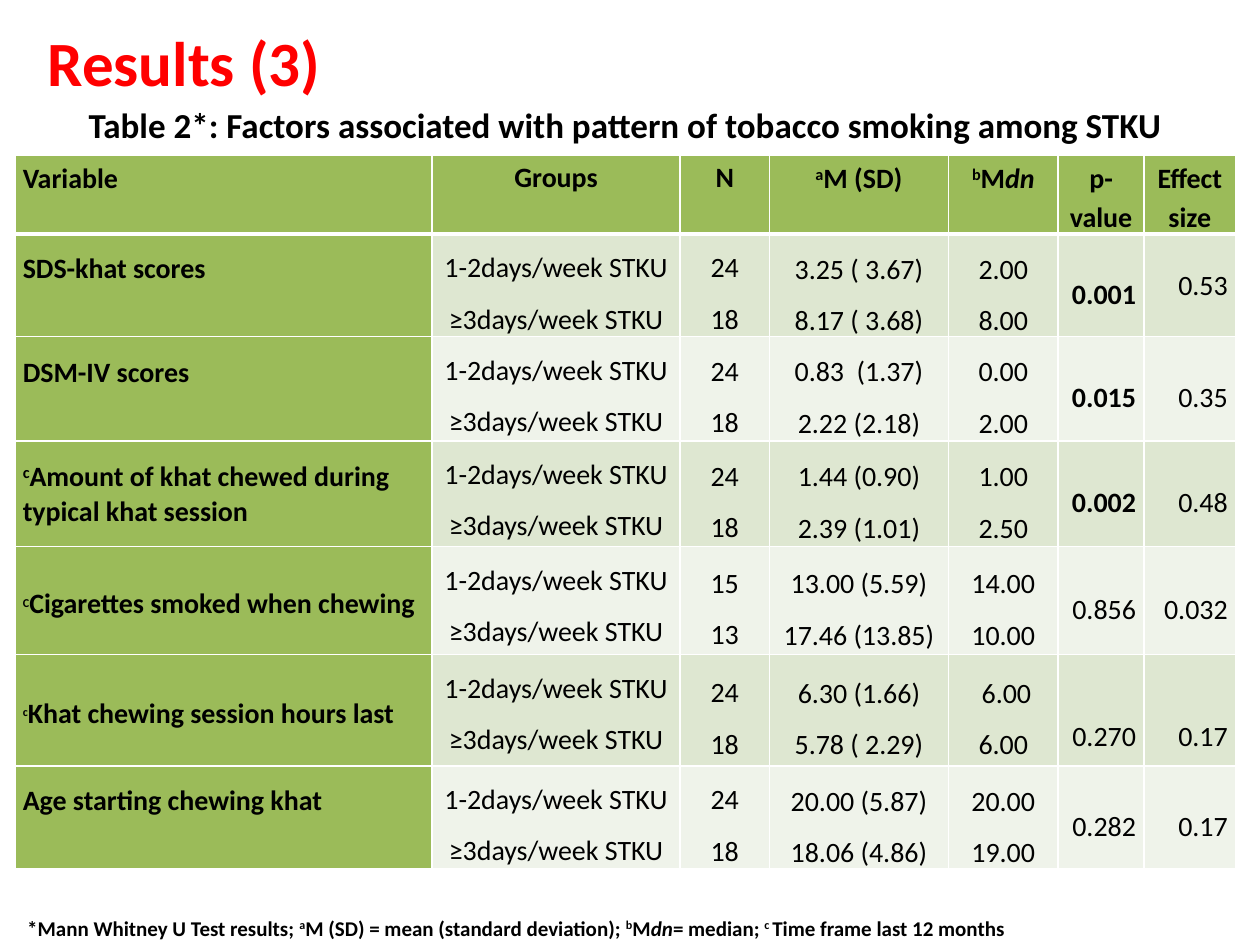
from dataclasses import dataclass
from lxml.etree import SubElement
from pptx import Presentation
from pptx.dml.color import RGBColor
from pptx.enum.text import MSO_ANCHOR, PP_ALIGN
from pptx.oxml.ns import qn
from pptx.util import Cm, Pt

LEFT, MID, RIGHT = PP_ALIGN.LEFT, PP_ALIGN.CENTER, PP_ALIGN.RIGHT


@dataclass(frozen=True)
class Theme:
    font: str = "Calibri"
    red: str = "FF0000"
    black: str = "000000"
    white: str = "FFFFFF"
    green: str = "9BBB59"
    bands: tuple = ("DEE7D1", "EFF3EA")
    title: int = 36
    head: int = 20
    cell: int = 16
    note: int = 12


class Deck:
    def __init__(self, theme):
        self.theme = theme
        self.file = Presentation()
        self.file.slide_width, self.file.slide_height = Cm(25.4), Cm(19.05)
        self.slide = self.file.slides.add_slide(self.file.slide_layouts[6])

    def line(self, para, runs, size, color=None, bold=True, align=LEFT, space=1.0):
        """Fill a paragraph; a run is (text, kind) or (text, kind, size)."""
        para.alignment, para.line_spacing = align, space
        for text, kind, *own in runs:
            run = para.add_run()
            run.text = text
            font = run.font
            font.name, font.bold = self.theme.font, bold
            font.size = Pt(own[0] if own else size)
            font.color.rgb = RGBColor.from_string(color or self.theme.black)
            if kind == "it":
                font.italic = True
            if kind == "sup":
                run._r.get_or_add_rPr().set("baseline", "30000")

    def text(self, box, runs, size, **look):
        frame = self.slide.shapes.add_textbox(*map(Cm, box)).text_frame
        frame.word_wrap = True
        frame.vertical_anchor = MSO_ANCHOR.MIDDLE
        self.line(frame.paragraphs[0], runs, size, **look)

    def table(self, left, top, cols, rows):
        frame = self.slide.shapes.add_table(
            len(rows), len(cols), Cm(left), Cm(top), Cm(sum(cols)), Cm(sum(rows)))
        grid = frame.table
        grid.horz_banding = False
        for col, width in zip(grid.columns, cols):
            col.width = Cm(width)
        for row, height in zip(grid.rows, rows):
            row.height = Cm(height)
        return grid

    def edges(self, cell, low):
        """Draw white cell borders, with the bottom one low points wide."""
        props = cell._tc.get_or_add_tcPr()
        for side, width in zip("LRTB", (1, 1, 1, low)):
            edge = SubElement(props, qn(f"a:ln{side}"), w=str(Pt(width)))
            fill = SubElement(edge, qn("a:solidFill"))
            SubElement(fill, qn("a:srgbClr"), val=self.theme.white)

    def cell(self, cell, lines, fill, tight=False, low=1, pad=(0.03, 0),
             anchor=MSO_ANCHOR.MIDDLE, **look):
        self.edges(cell, low)
        cell.fill.solid()
        cell.fill.fore_color.rgb = RGBColor.from_string(fill)
        cell.margin_left = cell.margin_right = Cm(0 if tight else 0.16)
        cell.margin_top, cell.margin_bottom = map(Cm, pad)
        cell.vertical_anchor = anchor
        frame = cell.text_frame
        for i, runs in enumerate(lines):
            para = frame.add_paragraph() if i else frame.paragraphs[0]
            self.line(para, runs, self.theme.cell, **look)


def plain(text):
    return [(text, "")]


COLS = [8.41, 5, 1.8, 3.61, 2.21, 1.73, 1.85]
ROWS = [1.58, 2.07, 2.1, 2.13, 2.18, 2.24, 2.08]
TIGHT = (1, 2)
GROUPS = ("1-2days/week STKU", "≥3days/week STKU")
HEADS = [
    plain("Variable"), plain("Groups"), plain("N"),
    [("a", "sup"), ("M (SD)", "")],
    [("b", "sup"), ("M", ""), ("dn", "it")],
    plain("p-value"), plain("Effect size"),
]
# label, its line spacing, its bottom pad, N, mean, median, p, effect size
DATA = [
    (plain("SDS-khat scores"), 1, 0.69, ("24", "18"),
     ("3.25 ( 3.67)", "8.17 ( 3.68)"), ("2.00", "8.00"), "0.001", "0.53"),
    (plain("DSM-IV scores"), 1, 0.69, ("24", "18"),
     ("0.83  (1.37)", "2.22 (2.18)"), ("0.00", "2.00"), "0.015", "0.35"),
    ([("c", "sup"), ("Amount of khat chewed during typical khat session", "")],
     1, 0, ("24", "18"),
     ("1.44 (0.90)", "2.39 (1.01)"), ("1.00", "2.50"), "0.002", "0.48"),
    ([("C", "sup", 12), ("Cigarettes smoked when chewing", "")],
     1.15, 0, ("15", "13"),
     ("13.00 (5.59)", "17.46 (13.85)"), ("14.00", "10.00"), "0.856", "0.032"),
    ([("c", "sup", 12), ("Khat chewing session hours last", "")],
     1.15, 0, ("24", "18"),
     ("6.30 (1.66)", "5.78 ( 2.29)"), (" 6.00", "6.00"), "0.270", "0.17"),
    (plain("Age starting chewing khat"), 1.15, 0.79, ("24", "18"),
     ("20.00 (5.87)", "18.06 (4.86)"), ("20.00", "19.00"), "0.282", "0.17"),
]
NOTE = [
    ("*Mann Whitney U Test results; ", ""), ("a", "sup"),
    ("M (SD) = mean (standard deviation); ", ""), ("b", "sup"),
    ("M", ""), ("dn", "it"), ("= median; ", ""), ("c ", "sup"),
    ("Time frame last 12 months", ""),
]


def fill_table(deck):
    theme = deck.theme
    grid = deck.table(0.3, 3.13, COLS, ROWS)
    for i, runs in enumerate(HEADS):
        deck.cell(grid.cell(0, i), [runs], theme.green, tight=i in TIGHT, low=3,
                  pad=(0 if i in TIGHT else 0.03, 0), anchor=MSO_ANCHOR.TOP,
                  align=MID if i else LEFT, space=1.15)
    for r, (label, space, pad, *pairs, prob, size) in enumerate(DATA, 1):
        band = theme.bands[(r - 1) % 2]
        deck.cell(grid.cell(r, 0), [label], theme.green, pad=(0.03, pad), space=space)
        for c, pair in enumerate([GROUPS, *pairs], 1):
            deck.cell(grid.cell(r, c), map(plain, pair), band, tight=c in TIGHT,
                      pad=(0 if c in TIGHT else 0.03, 0),
                      anchor=MSO_ANCHOR.TOP if c == 1 else MSO_ANCHOR.MIDDLE,
                      bold=False, align=MID, space=1.5)
        drop = 0.73 if prob == "0.270" else 0.03
        for c, text in ((5, prob), (6, size)):
            deck.cell(grid.cell(r, c), [plain(text)], band, pad=(drop, 0),
                      bold=c == 5 and float(prob) < 0.05, align=RIGHT,
                      space=1 if (r, c) == (1, 6) else 1.5)


def main():
    theme = Theme()
    deck = Deck(theme)
    deck.text((0.71, 0.56, 22.86, 1.37), plain("Results (3)"), theme.title,
              color=theme.red)
    deck.text((0.3, 1.9, 24.61, 1.2),
              plain("Table 2*: Factors associated with pattern of tobacco "
                    "smoking among STKU"), theme.head, align=MID)
    fill_table(deck)
    deck.text((0.3, 18.38, 24.61, 0.77 - 0.12), NOTE, theme.note)
    deck.file.save("out.pptx")


if __name__ == "__main__":
    main()
